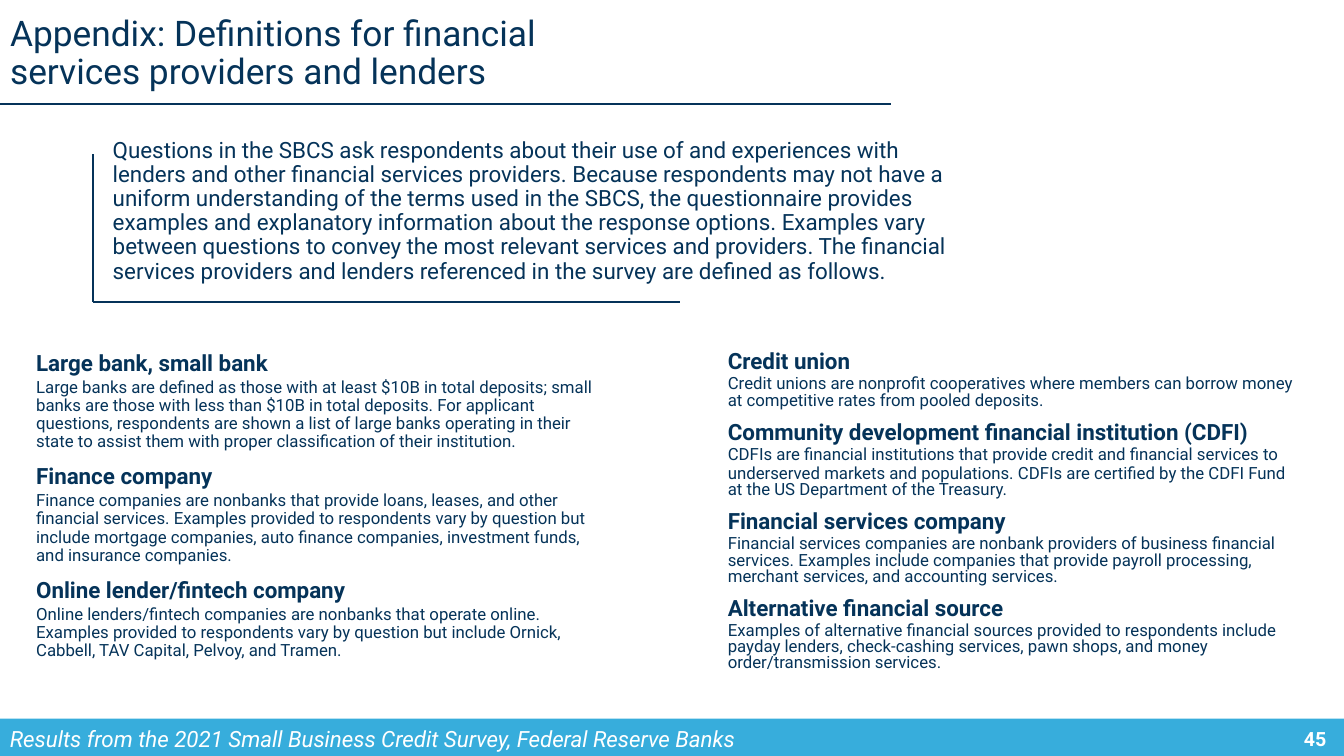
from lxml import etree
from pptx import Presentation
from pptx.dml.color import RGBColor
from pptx.enum.shapes import MSO_CONNECTOR, MSO_SHAPE
from pptx.enum.text import MSO_ANCHOR, PP_ALIGN
from pptx.oxml.ns import qn
from pptx.util import Inches, Pt

TOP, MID = MSO_ANCHOR.TOP, MSO_ANCHOR.MIDDLE
LEFT, CENTER = PP_ALIGN.LEFT, PP_ALIGN.CENTER
STRAIGHT, RECT = MSO_CONNECTOR.STRAIGHT, MSO_SHAPE.RECTANGLE

# Content
TITLE = "Appendix: Definitions for financial\vservices providers and lenders"
INTRO = (
    "Questions in the SBCS ask respondents about their use of and experiences with "
    "lenders and other financial services providers. Because respondents may not have "
    "a uniform understanding of the terms used in the SBCS, the questionnaire provides "
    "examples and explanatory information about the response options. Examples vary "
    "between questions to convey the most relevant services and providers. The financial "
    "services providers and lenders referenced in the survey are defined as follows."
)
BANKS = [
    ("Large bank, small bank", [
        "Large banks are defined as those with at least $10B in total deposits; small "
        "banks are those with less than $10B in total deposits. For applicant questions, "
        "respondents are shown a list of large banks operating in their state to assist "
        "them with proper classification of their institution."]),
    ("Finance company", [
        "Finance companies are nonbanks that provide loans, leases, and other financial "
        "services. Examples provided to respondents vary by question but include mortgage "
        "companies, auto finance companies, investment funds, and insurance companies."]),
    ("Online lender/fintech company", [
        "Online lenders/fintech companies are nonbanks that operate online. Examples "
        "provided to respondents vary by question but include Ornick, Cabbell, "
        "TAV Capital, Pelvoy, and Tramen."]),
]
OTHERS = [
    ("Credit union", [
        "Credit unions are nonprofit cooperatives where members can borrow money at "
        "competitive rates from pooled deposits."]),
    ("Community development financial institution (CDFI)", [
        "CDFIs are financial institutions that provide credit and financial services to",
        "underserved markets and populations. CDFIs are certified by the CDFI Fund at "
        "the US Department of the Treasury."]),
    ("Financial services company", [
        "Financial services companies are nonbank providers of business financial "
        "services. Examples include companies that provide payroll processing, merchant "
        "services, and accounting services."]),
    ("Alternative financial source", [
        "Examples of alternative financial sources provided to respondents include "
        "payday lenders, check-cashing services, pawn shops, and money "
        "order/transmission services."]),
]
FOOTER = "Results from the 2021 Small Business Credit Survey, Federal Reserve Banks"
PAGE = "45"

# Grid, in inches
WIDE, HIGH = 13.33, 7.5
COL_W = 5.82
COLUMNS = [(0.26, 3.44, 3.58, 0.9, BANKS), (7.12, 3.45, 3.38, 0.8, OTHERS)]
BAR_Y, BAR_H = 7.13, 0.37
RULE_Y, RULE_W = 1.03, 8.84
EDGE_X, EDGE_Y = 0.92, 3
NAVY, BLUE, WHITE = "053359", "37ADDC", "FFFFFF"
FACE = "Roboto"


def paint(color):
    return RGBColor.from_string(color)


def write(par, text, size, color=NAVY, bold=False, italic=False,
          lead=1.0, gap=0, align=LEFT):
    par.text = text
    par.line_spacing, par.space_before, par.alignment = lead, Pt(gap), align
    font = par.font
    font.name, font.size, font.color.rgb = FACE, Pt(size), paint(color)
    font.bold, font.italic = bold, italic


def add_box(slide, x, y, w, h, anchor=TOP):
    frame = slide.shapes.add_textbox(*map(Inches, (x, y, w, h))).text_frame
    frame.word_wrap, frame.vertical_anchor = True, anchor
    return frame


def add_rule(slide, x1, y1, x2, y2):
    rule = slide.shapes.add_connector(STRAIGHT, *map(Inches, (x1, y1, x2, y2)))
    rule.line.color.rgb, rule.line.width = paint(NAVY), Pt(1.5)
    etree.SubElement(rule._element.spPr, qn("a:effectLst"))


def add_terms(slide, x, y, h, lead, terms):
    frame = add_box(slide, x, y, COL_W, h)
    lines = []
    for name, texts in terms:
        lines.append((name, 16, True, 10))
        lines += [(text, 12, False, 2) for text in texts]
    for i, (text, size, bold, gap) in enumerate(lines):
        par = frame.add_paragraph() if i else frame.paragraphs[0]
        write(par, text, size, bold=bold, lead=lead, gap=gap if i else 0)


def main():
    deck = Presentation()
    deck.slide_width, deck.slide_height = Inches(WIDE), Inches(HIGH)
    slide = deck.slides.add_slide(deck.slide_layouts[5])

    # Title and its rule
    title = slide.shapes.title
    title.left, title.top, title.width, title.height = map(
        Inches, (0, 0.15, 7.31, 0.78))
    title.text_frame.vertical_anchor = MID
    title.text_frame.word_wrap = True
    write(title.text_frame.paragraphs[0], TITLE, 25.2, lead=0.9)
    add_rule(slide, 0, RULE_Y, RULE_W, RULE_Y)

    # Footer bar
    bar = slide.shapes.add_shape(
        RECT, 0, Inches(BAR_Y), Inches(WIDE), Inches(HIGH - BAR_Y))
    bar.shadow.inherit = False
    bar.fill.solid()
    bar.fill.fore_color.rgb = paint(BLUE)
    bar.line.fill.background()
    note = add_box(slide, 0, BAR_Y + 0.01, 8.25, BAR_H)
    write(note.paragraphs[0], FOOTER, 16, WHITE, italic=True)
    page = add_box(slide, 12.78, BAR_Y + 0.03, 0.53, 0.34, MID)
    write(page.paragraphs[0], PAGE, 14, WHITE, bold=True, align=CENTER)

    # Introduction with its corner lines
    intro = add_box(slide, 1.02, 1.33, 8.56, 1.56)
    write(intro.paragraphs[0], INTRO, 16, lead=0.9)
    add_rule(slide, EDGE_X, 1.53, EDGE_X, EDGE_Y)
    add_rule(slide, EDGE_X, EDGE_Y, 6.74, EDGE_Y)

    # Definitions
    for column in COLUMNS:
        add_terms(slide, *column)

    deck.save("out.pptx")


if __name__ == "__main__":
    main()
